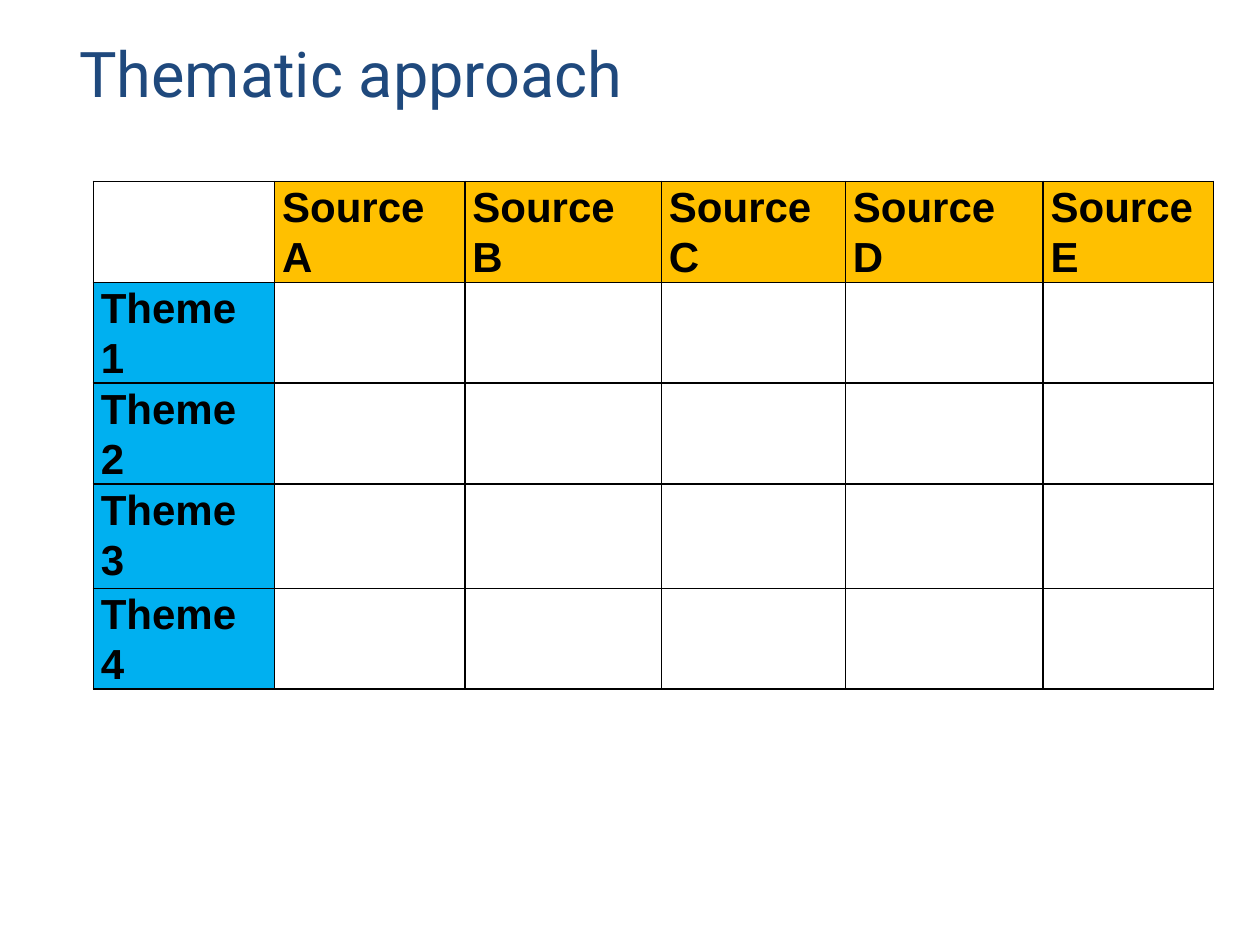
import pptx
import pptx.util
import pptx.dml.color
import pptx.enum.text
import pptx.oxml
import pptx.oxml.ns

Inches = pptx.util.Inches

TITLE = "Thematic approach"
SOURCES = ["Source A", "Source B", "Source C", "Source D", "Source E"]
THEMES = ["Theme 1", "Theme 2", "Theme 3", "Theme 4"]

TITLE_BOX = (0.5, 0.3, 9, 0.55)
TABLE_ORIGIN = (0.74, 1.44)
COLUMN_WIDTHS = [1.44, 1.51, 1.56, 1.46, 1.57, 1.35]
ROW_HEIGHTS = [0.8, 0.8, 0.8, 0.83, 0.8]

THEME = {
    "title_font": "Roboto", "title_size": 36, "title_color": "1F497D",
    "table_font": "Arial", "table_size": 24, "table_color": "000000",
    "source_fill": "FFC000", "theme_fill": "00B0F0",
    "border_color": "000000", "border_width": 1,
}


def rgb(color):
    return pptx.dml.color.RGBColor.from_string(color)


def write_text(frame, text, *, font, size, color, bold=False, spacing=None):
    para = frame.paragraphs[0]
    para.alignment = pptx.enum.text.PP_ALIGN.LEFT
    para.line_spacing = spacing
    span = para.add_run()
    span.text = text
    span.font.name = font
    span.font.size = pptx.util.Pt(size)
    span.font.bold = bold
    span.font.color.rgb = rgb(color)


def draw_borders(cell):
    properties = cell._tc.get_or_add_tcPr()
    width = pptx.util.Pt(THEME["border_width"])
    for position, side in enumerate(("lnL", "lnR", "lnT", "lnB")):
        line = pptx.oxml.parse_xml(
            f'<a:{side} {pptx.oxml.ns.nsdecls("a")} w="{width}"><a:solidFill>'
            f'<a:srgbClr val="{THEME["border_color"]}"/></a:solidFill></a:{side}>'
        )
        properties.insert(position, line)


def format_cell(cell, text, fill):
    cell.margin_left = cell.margin_right = Inches(0.06)
    cell.margin_top = cell.margin_bottom = 0
    if fill:
        cell.fill.solid()
        cell.fill.fore_color.rgb = rgb(fill)
    else:
        cell.fill.background()
    if text:
        write_text(cell.text_frame, text, font=THEME["table_font"],
                   size=THEME["table_size"], color=THEME["table_color"],
                   bold=True, spacing=1.07)
    draw_borders(cell)


def add_title(page):
    box = page.shapes.title
    box.left, box.top, box.width, box.height = map(Inches, TITLE_BOX)
    frame = box.text_frame
    frame.margin_left = frame.margin_right = Inches(0.13)
    frame.margin_top = frame.margin_bottom = Inches(0.07)
    frame.vertical_anchor = pptx.enum.text.MSO_ANCHOR.MIDDLE
    frame.auto_size = pptx.enum.text.MSO_AUTO_SIZE.NONE
    write_text(frame, TITLE, font=THEME["title_font"],
               size=THEME["title_size"], color=THEME["title_color"])


def add_theme_table(page):
    left, top = TABLE_ORIGIN
    table = page.shapes.add_table(
        len(ROW_HEIGHTS), len(COLUMN_WIDTHS), Inches(left), Inches(top),
        Inches(sum(COLUMN_WIDTHS)), Inches(sum(ROW_HEIGHTS))).table
    table.horz_banding = False
    table.first_row = False
    for column, width in zip(table.columns, COLUMN_WIDTHS):
        column.width = Inches(width)
    for row, height in zip(table.rows, ROW_HEIGHTS):
        row.height = Inches(height)

    blanks = [("", None)] * len(SOURCES)
    grid = [[("", None)] + [(name, THEME["source_fill"]) for name in SOURCES]]
    grid += [[(name, THEME["theme_fill"])] + blanks for name in THEMES]
    for row, entries in zip(table.rows, grid):
        for cell, (text, fill) in zip(row.cells, entries):
            format_cell(cell, text, fill)


def main():
    deck = pptx.Presentation()
    deck.slide_width, deck.slide_height = Inches(10), Inches(7.5)
    page = deck.slides.add_slide(deck.slide_layouts[5])
    add_title(page)
    add_theme_table(page)
    deck.save("out.pptx")


if __name__ == "__main__":
    main()
